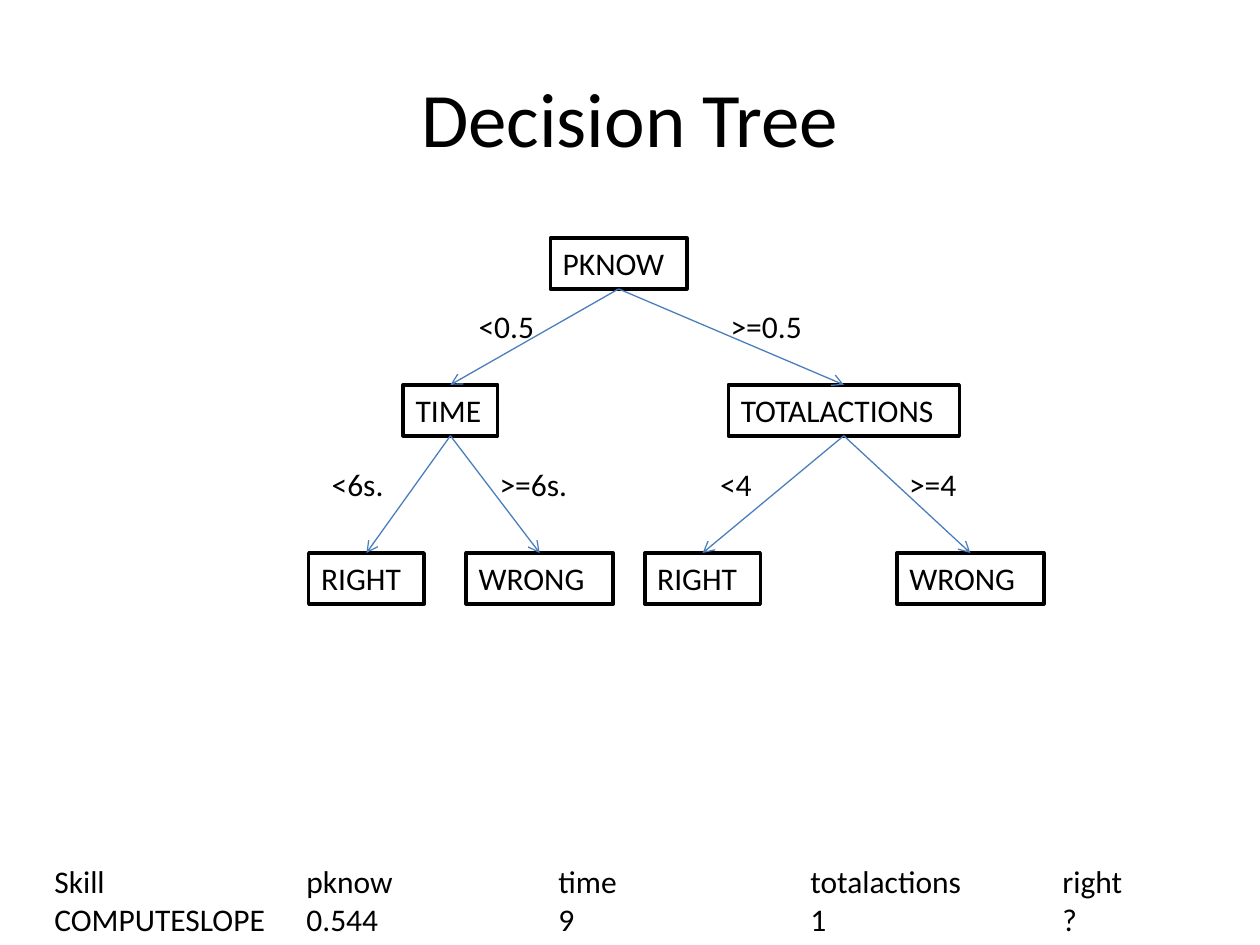
from lxml.etree import SubElement
from pptx import Presentation
from pptx.dml.color import RGBColor
from pptx.enum.shapes import MSO_CONNECTOR, MSO_SHAPE
from pptx.enum.text import MSO_ANCHOR, MSO_AUTO_SIZE, PP_ALIGN
from pptx.oxml.ns import qn
from pptx.util import Pt


def color(code):
    return RGBColor.from_string(code)


class Board:
    font = "Calibri"
    ink = "000000"
    paper = "FFFFFF"
    blue = "4B7EBC"
    size = 18
    high = 29.1

    def __init__(self, deck):
        self.slide = deck.slides.add_slide(deck.slide_layouts[5])

    def style(self, frame, size, align=PP_ALIGN.LEFT):
        for para in frame.paragraphs:
            para.alignment = align
            for run in para.runs:
                run.font.name = self.font
                run.font.size = Pt(size)
                run.font.color.rgb = color(self.ink)

    def title(self, text, left, top, width, height):
        head = self.slide.shapes.title
        head.left, head.top = Pt(left), Pt(top)
        head.width, head.height = Pt(width), Pt(height)
        head.text_frame.text = text
        head.text_frame.vertical_anchor = MSO_ANCHOR.MIDDLE
        self.style(head.text_frame, 44, PP_ALIGN.CENTER)

    def fill_text(self, shape, text):
        frame = shape.text_frame
        frame.text = text
        frame.word_wrap = True
        frame.vertical_anchor = MSO_ANCHOR.TOP
        frame.auto_size = MSO_AUTO_SIZE.SHAPE_TO_FIT_TEXT
        self.style(frame, self.size)

    def node(self, text, left, top, width):
        box = self.slide.shapes.add_shape(
            MSO_SHAPE.RECTANGLE, Pt(left), Pt(top), Pt(width), Pt(self.high))
        box.shadow.inherit = False
        box.fill.solid()
        box.fill.fore_color.rgb = color(self.paper)
        box.line.color.rgb = color(self.ink)
        box.line.width = Pt(2)
        self.fill_text(box, text)
        return box

    def label(self, text, left, top, width=66, height=high):
        box = self.slide.shapes.add_textbox(
            Pt(left), Pt(top), Pt(width), Pt(height))
        self.fill_text(box, text)
        return box

    def rows(self, lines, left, top, width, height, step, count):
        box = self.label("\n".join(lines), left, top, width, height)
        for para in box.text_frame.paragraphs:
            tabs = SubElement(para._p.get_or_add_pPr(), qn("a:tabLst"))
            for stop in range(1, count + 1):
                SubElement(tabs, qn("a:tab"), pos=str(Pt(step * stop)), algn="l")

    def arrow(self, upper, lower):
        link = self.slide.shapes.add_connector(MSO_CONNECTOR.STRAIGHT, 0, 0, 0, 0)
        link.begin_connect(upper, 2)
        link.end_connect(lower, 0)
        link.line.color.rgb = color(self.blue)
        link.line.width = Pt(0.75)
        SubElement(link.line._get_or_add_ln(), qn("a:tailEnd"), type="arrow")
        SubElement(link._element.spPr, qn("a:effectLst"))


def main():
    deck = Presentation()
    deck.slide_width, deck.slide_height = Pt(720), Pt(540)
    board = Board(deck)
    board.title("Decision Tree", 36, 21.6, 648, 90)

    root = board.node("PKNOW", 314.5, 136, 78)
    time, total = [
        board.node(text, left, 219.9, width)
        for text, left, width in [("TIME", 230.4, 54), ("TOTALACTIONS", 416.2, 132)]
    ]
    leaves = [
        board.node(text, left, 316, width)
        for text, left, width in [
            ("RIGHT", 176.4, 66), ("WRONG", 266.4, 84),
            ("RIGHT", 368.5, 66), ("WRONG", 512.5, 84)]
    ]

    for upper, lowers in [(root, [time, total]), (time, leaves[:2]), (total, leaves[2:])]:
        for lower in lowers:
            board.arrow(upper, lower)

    tests = {
        172: [("<0.5", 266.4), (">=0.5", 410.4)],
        262: [("<6s.", 182.4), (">=6s.", 278.4), ("<4", 404.4), (">=4", 512.4)],
    }
    for top, level in tests.items():
        for text, left in level:
            board.label(text, left, top)

    board.rows(
        ["Skill\t\tpknow\t\ttime\t\ttotalactions\tright",
         "COMPUTESLOPE\t0.544\t\t9\t\t1\t\t?"],
        24, 489, 678, 51, 72, 8)
    deck.save("out.pptx")


if __name__ == "__main__":
    main()
